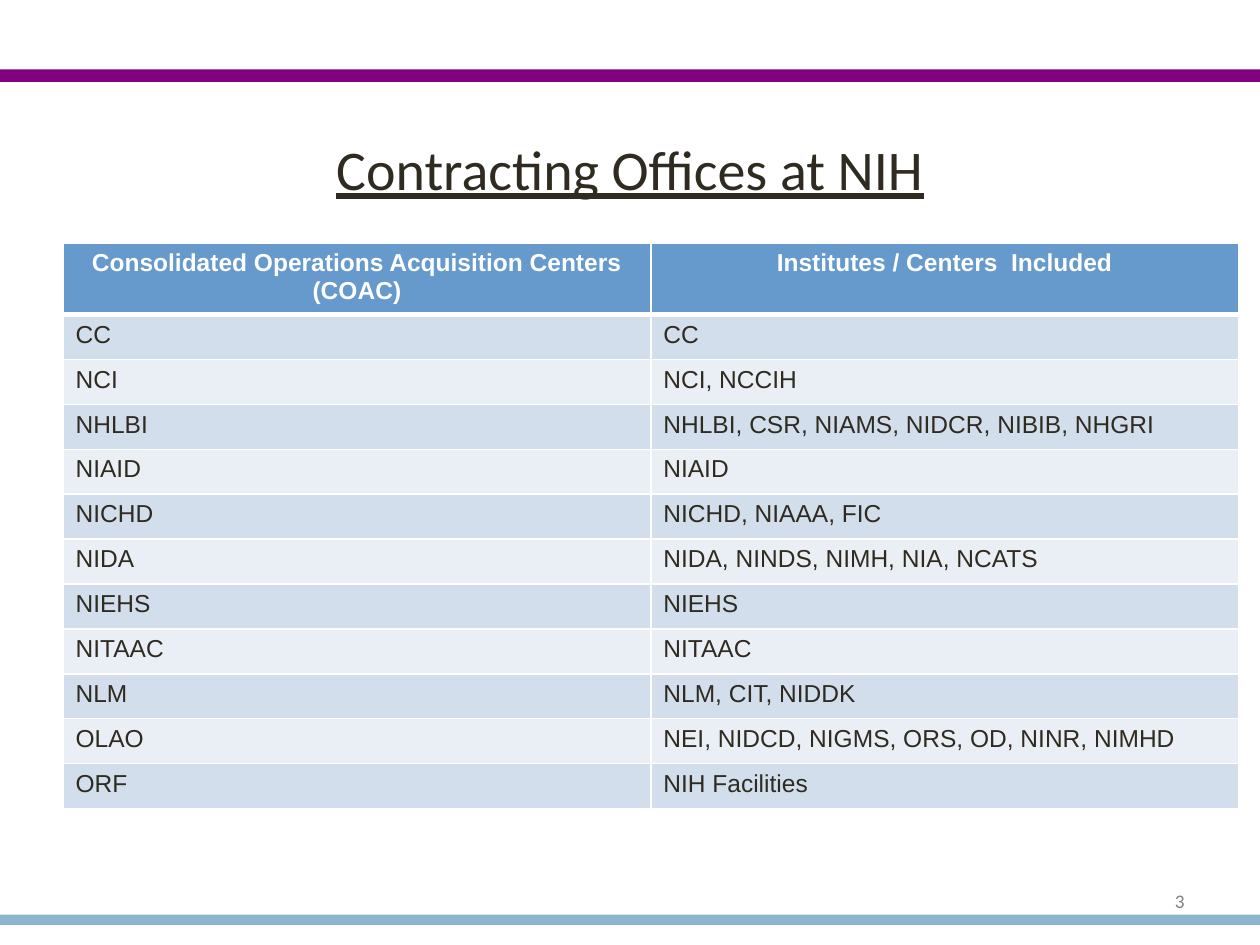
import pptx
import pptx.util
import pptx.dml.color
import pptx.enum.shapes
import pptx.enum.text
import pptx.oxml.ns
from lxml import etree

Inches, Pt = pptx.util.Inches, pptx.util.Pt
ALIGN = pptx.enum.text.PP_ALIGN

# Content
TITLE = "Contracting Offices at NIH"
PAGE_NUMBER = "3"
HEADINGS = (
    "Consolidated Operations Acquisition Centers (COAC)",
    "Institutes / Centers  Included",
)
OFFICES = [
    ("CC", "CC"),
    ("NCI", "NCI, NCCIH"),
    ("NHLBI", "NHLBI, CSR, NIAMS, NIDCR, NIBIB, NHGRI"),
    ("NIAID", "NIAID"),
    ("NICHD", "NICHD, NIAAA, FIC"),
    ("NIDA", "NIDA, NINDS, NIMH, NIA, NCATS"),
    ("NIEHS", "NIEHS"),
    ("NITAAC", "NITAAC"),
    ("NLM", "NLM, CIT, NIDDK"),
    ("OLAO", "NEI, NIDCD, NIGMS, ORS, OD, NINR, NIMHD"),
    ("ORF", "NIH Facilities"),
]
COLORS = {
    "top_band": "800080",
    "bottom_band": "8DB6CD",
    "ink": "2F2B20",
    "page_number": "7F7F7F",
    "heading": "6699CC",
    "odd_row": "D3DEEC",
    "even_row": "EAEFF6",
    "white": "FFFFFF",
}
BANDS = [("top_band", 0.55, 0.1), ("bottom_band", 7.26, 0.08)]  # color, top, height


def rgb(key):
    return pptx.dml.color.RGBColor.from_string(COLORS[key])


def write(frame, text, size, font, color, align, bold=False, underline=False):
    paragraph = frame.paragraphs[0]
    paragraph.alignment = align
    run = paragraph.add_run()
    run.text = text
    run.font.size = Pt(size)
    run.font.name = font
    run.font.bold = bold
    run.font.underline = underline
    run.font.color.rgb = rgb(color)


def add_label(slide, box, text, *style, **emphasis):
    frame = slide.shapes.add_textbox(*map(Inches, box)).text_frame
    frame.word_wrap = True
    frame.vertical_anchor = pptx.enum.text.MSO_ANCHOR.MIDDLE
    write(frame, text, *style, **emphasis)


def set_borders(cell, bottom):
    properties = cell._tc.get_or_add_tcPr()
    for side, width in (("L", 1), ("R", 1), ("T", 1), ("B", bottom)):
        line = etree.SubElement(
            properties, pptx.oxml.ns.qn(f"a:ln{side}"), w=str(Pt(width)))
        fill = etree.SubElement(line, pptx.oxml.ns.qn("a:solidFill"))
        etree.SubElement(fill, pptx.oxml.ns.qn("a:srgbClr"), val=COLORS["white"])


def main():
    deck = pptx.Presentation()
    deck.slide_width, deck.slide_height = Inches(10), Inches(7.5)
    slide = deck.slides.add_slide(deck.slide_layouts[6])

    # Bands across the slide
    for color, top, height in BANDS:
        band = slide.shapes.add_shape(
            pptx.enum.shapes.MSO_SHAPE.RECTANGLE,
            0, Inches(top), deck.slide_width, Inches(height))
        band.shadow.inherit = False
        band.fill.solid()
        band.fill.fore_color.rgb = rgb(color)
        band.line.fill.background()

    # Title and page number
    add_label(slide, (0.5, 0.92, 9, 0.83), TITLE,
              32, "Calibri", "ink", ALIGN.CENTER, underline=True)
    add_label(slide, (7.17, 6.95, 2.33, 0.4), PAGE_NUMBER,
              11, "Calibri", "page_number", ALIGN.RIGHT)

    # Table of offices
    rows = [HEADINGS] + OFFICES
    offices = slide.shapes.add_table(
        len(rows), len(HEADINGS),
        Inches(0.5), Inches(1.93), Inches(9.33), Inches(4.28)).table
    for r, row in enumerate(rows):
        heading = r == 0
        fill = "heading" if heading else "odd_row" if r % 2 else "even_row"
        for c, text in enumerate(row):
            cell = offices.cell(r, c)
            set_borders(cell, 3 if heading else 1)
            cell.fill.solid()
            cell.fill.fore_color.rgb = rgb(fill)
            write(cell.text_frame, text, 14, "Arial",
                  "white" if heading else "ink",
                  ALIGN.CENTER if heading else ALIGN.LEFT, bold=heading)

    deck.save("out.pptx")


if __name__ == "__main__":
    main()
